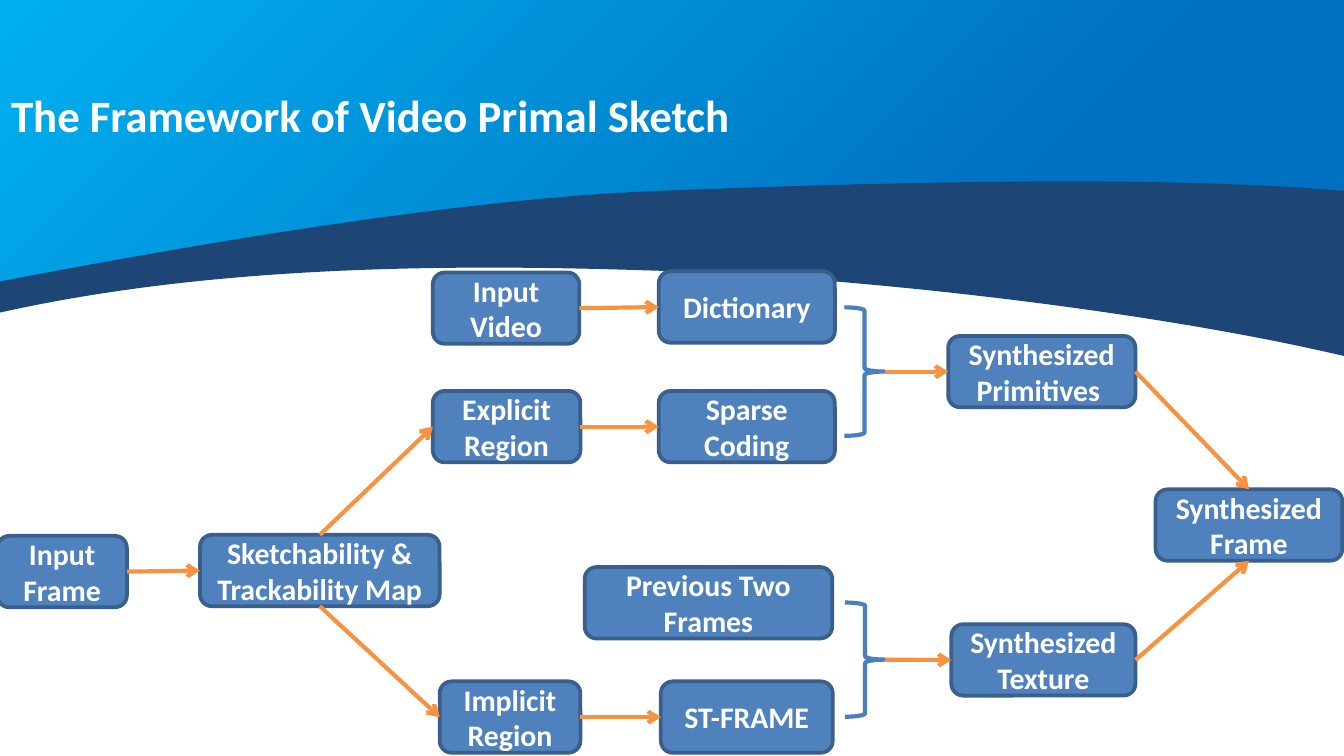
from lxml.etree import SubElement
from pptx import Presentation
from pptx.dml.color import RGBColor
from pptx.enum.shapes import MSO_CONNECTOR as LINE, MSO_SHAPE as SHAPE
from pptx.enum.text import MSO_ANCHOR as ANCHOR, MSO_AUTO_SIZE as AUTO, PP_ALIGN as ALIGN
from pptx.oxml.ns import qn
from pptx.util import Cm, Pt

COLORS = {"sky": "00B0F0", "deep": "0070C0", "navy": "1D4575", "box": "4F81BD",
          "edge": "3A5F8C", "brace": "4B7EBC", "arrow": "F69240", "text": "FFFFFF"}
FONT = "Calibri"
TITLE = "The Framework of Video Primal Sketch"
BOX_HEIGHT = 1.35
BRACE_WIDTH = 0.76
TOP, LEFT, BOTTOM, RIGHT = range(4)

# Steps: left, top, width in cm
STEPS = {
    "Input Frame": (-0.05, 10.13, 2.45),
    "Sketchability & Trackability Map": (3.78, 10.11, 4.53),
    "Input Video": (8.18, 5.15, 2.77),
    "Explicit Region": (8.18, 7.39, 2.79),
    "Implicit Region": (8.31, 12.88, 2.66),
    "Dictionary": (12.45, 5.13, 3.33),
    "Sparse Coding": (12.45, 7.39, 3.33),
    "Previous Two Frames": (11.05, 10.72, 4.68),
    "ST-FRAME": (12.49, 12.88, 3.25),
    "Synthesized Primitives ": (17.92, 6.35, 3.54),
    "Synthesized Texture": (17.98, 11.8, 3.48),
    "Synthesized Frame": (21.84, 9.25, 3.53),
}
FLOWS = [
    ("Input Frame", RIGHT, "Sketchability & Trackability Map", LEFT),
    ("Sketchability & Trackability Map", TOP, "Explicit Region", LEFT),
    ("Sketchability & Trackability Map", BOTTOM, "Implicit Region", LEFT),
    ("Input Video", RIGHT, "Dictionary", LEFT),
    ("Explicit Region", RIGHT, "Sparse Coding", LEFT),
    ("Implicit Region", RIGHT, "ST-FRAME", LEFT),
    ("Synthesized Primitives ", RIGHT, "Synthesized Frame", TOP),
    ("Synthesized Texture", RIGHT, "Synthesized Frame", BOTTOM),
]
# Braces: left, top, height in cm, and the step they lead to
MERGES = [(15.96, 5.81, 2.43, "Synthesized Primitives "),
          (15.97, 11.39, 2.16, "Synthesized Texture")]

# Outlines: one point is a straight side, three points are a Bézier curve
SKY = [[(0, 0)], [(25.4, 0)], [(25.4, 3.66)],
       [(23.9, 3.51), (22.1, 3.48), (20.24, 3.48)],
       [(17.45, 3.48), (14.55, 3.58), (12.45, 3.66)],
       [(8.69, 3.78), (3.71, 4.67), (0, 5.36)]]
WAVE = [[(20.22, 3.43)],
        [(17.4, 3.43), (14.5, 3.53), (12.42, 3.61)],
        [(8.64, 3.76), (3.66, 4.62), (-0.05, 5.33)],
        [(-0.05, 5.92)],
        [(3.81, 5.05), (8.15, 4.98), (12.17, 5.11)],
        [(15.9, 5.21), (21.62, 5.84), (25.4, 6.73)],
        [(25.4, 3.61)],
        [(23.88, 3.48), (22.07, 3.43), (20.22, 3.43)]]


def color(key):
    return RGBColor.from_string(COLORS[key])


def add_outline(sides):
    ends = [(Cm(x), Cm(y)) for x, y in (side[-1] for side in sides)]
    builder = slide.shapes.build_freeform(*ends[0])
    builder.add_line_segments(ends[1:], close=True)
    outline = builder.convert_to_shape()
    outline.shadow.inherit = False
    outline.line.fill.background()
    # Bend the sides that have control points
    segments = list(outline._element.iter(qn("a:lnTo")))
    for segment, side in zip(segments, sides[1:]):
        if len(side) == 3:
            segment.tag = qn("a:cubicBezTo")
            end = segment[0]
            for x, y in side[:2]:
                control = SubElement(segment, qn("a:pt"), x=str(Cm(x) - outline.left),
                                     y=str(Cm(y) - outline.top))
                end.addprevious(control)
    return outline


def style_text(paragraph, size):
    font = paragraph.runs[0].font
    font.name, font.size, font.bold = FONT, Pt(size), True
    font.color.rgb = color("text")


def add_arrow(x1=0, y1=0, x2=0, y2=0):
    arrow = slide.shapes.add_connector(LINE.STRAIGHT, x1, y1, x2, y2)
    arrow.line.color.rgb = color("arrow")
    arrow.line.width = Pt(2.25)
    SubElement(arrow.line._get_or_add_ln(), qn("a:tailEnd"), type="arrow")
    SubElement(arrow._element.spPr, qn("a:effectLst"))
    return arrow


prs = Presentation()
prs.slide_width, prs.slide_height = Cm(25.4), Cm(14.29)
slide = prs.slides.add_slide(prs.slide_layouts[6])

# Header background
sky = add_outline(SKY)
sky.fill.gradient()
sky.fill.gradient_angle = 315
for stop, (key, position) in zip(sky.fill.gradient_stops, [("sky", 0), ("deep", 0.76)]):
    stop.color.rgb = color(key)
    stop.position = position
wave = add_outline(WAVE)
wave.fill.solid()
wave.fill.fore_color.rgb = color("navy")

# Title
title = slide.shapes.add_textbox(Cm(-0.04), Cm(0.01), Cm(15.98), Cm(2.82)).text_frame
title.word_wrap = True
title.auto_size = AUTO.SHAPE_TO_FIT_TEXT
title.text = TITLE
title.paragraphs[0].line_spacing = 2.5
style_text(title.paragraphs[0], 24)

# Steps
boxes = {}
for label, (left, top, width) in STEPS.items():
    box = slide.shapes.add_shape(SHAPE.ROUNDED_RECTANGLE, Cm(left), Cm(top),
                                 Cm(width), Cm(BOX_HEIGHT))
    box.shadow.inherit = False
    box.fill.solid()
    box.fill.fore_color.rgb = color("box")
    box.line.color.rgb = color("edge")
    box.line.width = Pt(2)
    frame = box.text_frame
    frame.word_wrap = True
    frame.vertical_anchor = ANCHOR.MIDDLE
    frame.text = label
    frame.paragraphs[0].alignment = ALIGN.CENTER
    style_text(frame.paragraphs[0], 16)
    boxes[label] = box

# Arrows between steps
for source, source_side, target, target_side in FLOWS:
    arrow = add_arrow()
    arrow.begin_connect(boxes[source], source_side)
    arrow.end_connect(boxes[target], target_side)

# Braces that merge two steps into one
for left, top, height, target in MERGES:
    brace = slide.shapes.add_shape(SHAPE.RIGHT_BRACE, Cm(left), Cm(top),
                                   Cm(BRACE_WIDTH), Cm(height))
    brace.shadow.inherit = False
    brace.fill.background()
    brace.line.color.rgb = color("brace")
    brace.line.width = Pt(2.25)
    tip_x, tip_y = Cm(left + BRACE_WIDTH), Cm(top + height / 2)
    add_arrow(tip_x, tip_y, tip_x, tip_y).end_connect(boxes[target], LEFT)

prs.save("out.pptx")
